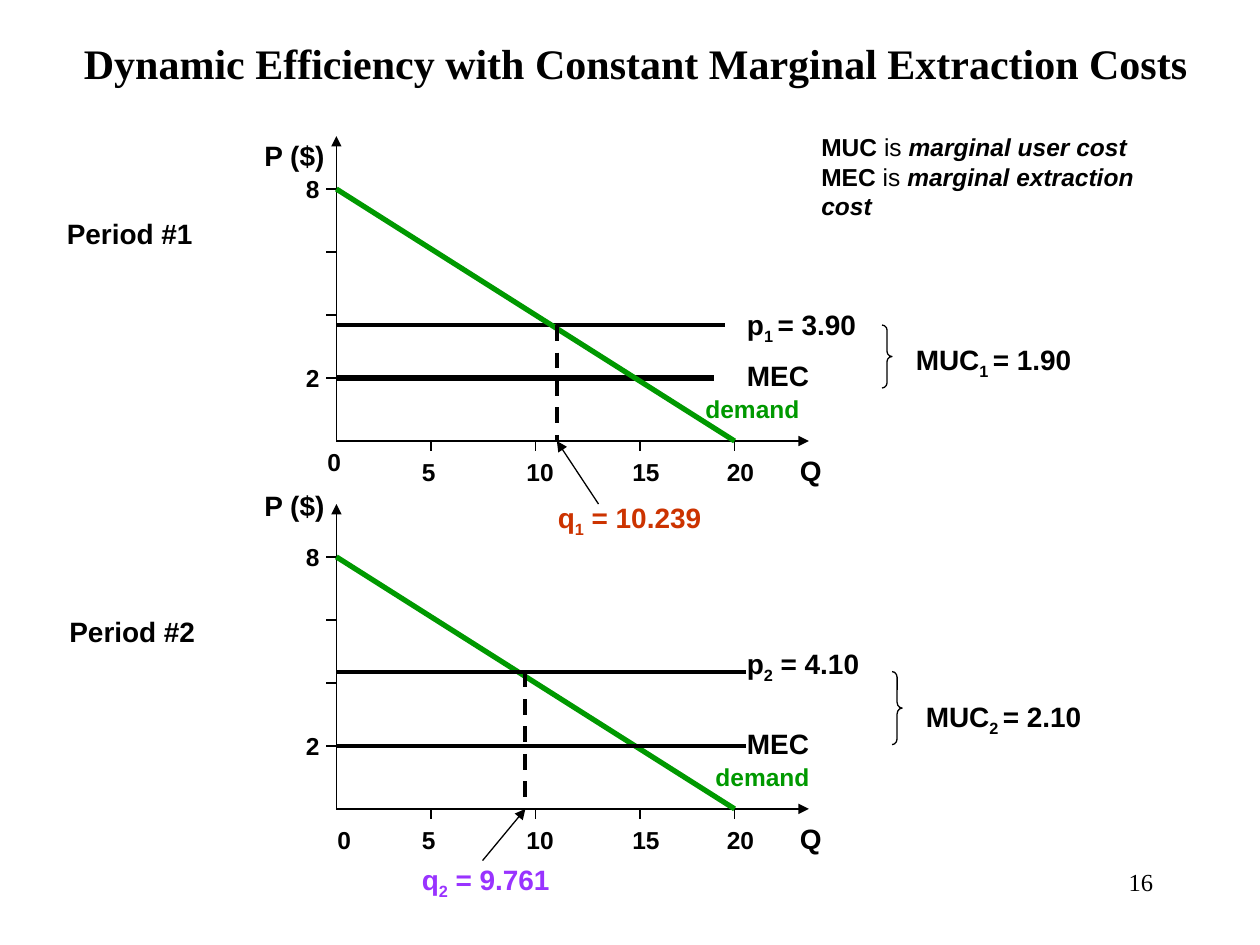
"""Build a slide of two demand diagrams showing dynamic efficiency."""
import pptx
import pptx.dml.color
import pptx.enum.dml
import pptx.enum.shapes
import pptx.enum.text
import pptx.oxml.ns
import pptx.util
from lxml import etree
from pptx.util import Inches

COLORS = {"black": "000000", "demand": "009900", "q1": "CC3300", "q2": "9933FF"}
ALIGN = pptx.enum.text.PP_ALIGN
AXIS_X, AXIS_END, AXIS_HEIGHT = 2.67, 6.42, 2.42
PRICE_STEP, TICK = 0.5, 0.08
QUANTITIES = [(5, 3.42, 3.25, 0.31), (10, 4.25, 4.08, 0.42),
              (15, 5.08, 4.92, 0.42), (20, 5.83, 5.67, 0.42)]

TITLE = "Dynamic Efficiency with Constant Marginal Extraction Costs"
NOTE = [[("MUC", "b"), (" is ", ""), ("marginal user cost", "bi")],
        [("MEC", "b"), (" is ", ""), ("marginal extraction cost", "bi")]]

PANELS = [
    {"base": 3.5, "period": ("Period #1", 0.25, 1.67, 1.56),
     "levels": [(3, 5.67, 3), (2.58, 5.75, 2.25)], "demand_on_top": True,
     "quantity": 4.42, "price": 2.58, "pointer": (4.75, 4),
     "brace": (7, 2.58, 0.5, 0.5), "zero": (2.5, 3.5),
     "price_axis": 1.05, "demand": (5.5, 3.08), "mec": 2.8,
     "labels": [("p", "1 ", "= 3.90", 5.83, 2.39, 1.09, "black"),
                ("MUC", "1 ", "= 1.90", 7.17, 2.67, 1.75, "black"),
                ("q", "1", " = 10.239", 4.33, 3.92, 1.36, "q1")]},
    {"base": 6.42, "period": ("Period #2", 0.45, 4.83, 1.2),
     "levels": [(5.92, 5.92, 2.25), (5.33, 5.92, 2.25)], "demand_on_top": False,
     "quantity": 4.17, "price": 5.33, "pointer": (3.83, 6.83),
     "brace": (7.08, 5.33, 0.58, 0.58), "zero": (2.58, 6.5),
     "price_axis": 3.83, "demand": (5.58, 6), "mec": 5.72,
     "labels": [("p", "2", " = 4.10", 5.83, 5.08, 1.17, "black"),
                ("MUC", "2 ", "= 2.10", 7.25, 5.5, 1.83, "black"),
                ("q", "2", " = 9.761", 3.25, 6.8, 1.23, "q2")]},
]


def rgb(name):
    return pptx.dml.color.RGBColor.from_string(COLORS[name])


def add_text(s, paragraphs, x, y, w, h=0.37, size=16, color="black",
             font="Arial", align=ALIGN.LEFT, wrap=False):
    """Add paragraphs of (text, style) runs: b bold, i italic, s subscript."""
    tf = s.shapes.add_textbox(Inches(x), Inches(y), Inches(w), Inches(h)).text_frame
    tf.word_wrap = wrap
    for i, runs in enumerate(paragraphs):
        p = tf.add_paragraph() if i else tf.paragraphs[0]
        p.alignment = align
        p.font.name, p.font.size = font, pptx.util.Pt(size)
        p.font.color.rgb = rgb(color)
        for text, style in runs:
            r = p.add_run()
            r.text = text
            r.font.name, r.font.size = font, pptx.util.Pt(size)
            r.font.color.rgb = rgb(color)
            r.font.bold, r.font.italic = "b" in style, "i" in style
            if "s" in style:
                r._r.get_or_add_rPr().set("baseline", "-25000")
    return tf


def add_label(s, text, x, y, w, h=0.37, **options):
    return add_text(s, [[(str(text), "b")]], x, y, w, h, **options)


def add_line(s, start, end, color="black", width=0.75, arrow=False, dash=False):
    line = s.shapes.add_connector(pptx.enum.shapes.MSO_CONNECTOR.STRAIGHT,
                                  *map(Inches, (*start, *end)))
    line.line.color.rgb = rgb(color)
    line.line.width = pptx.util.Pt(width)
    if dash:
        line.line.dash_style = pptx.enum.dml.MSO_LINE.DASH
    if arrow:
        ln = line.line._get_or_add_ln()
        etree.SubElement(ln, pptx.oxml.ns.qn("a:tailEnd"), type="triangle")
    etree.SubElement(line._element.spPr, pptx.oxml.ns.qn("a:effectLst"))


def add_axes(s, panel):
    base = panel["base"]
    origin = (AXIS_X, base)
    add_line(s, origin, (AXIS_X, base - AXIS_HEIGHT), arrow=True)
    add_line(s, origin, (AXIS_END, base), arrow=True)
    for price in (2, 4, 6, 8):
        y = base - price / 2 * PRICE_STEP
        add_line(s, (AXIS_X - TICK, y), (AXIS_X, y))
        if price in (2, 8):
            add_label(s, price, 2.33, y - 0.17, 0.31, 0.33, size=14)
    for quantity, x, left, width in QUANTITIES:
        add_line(s, (x, base), (x, base + TICK))
        add_label(s, quantity, left, base + TICK, width, 0.33, size=14)
    add_label(s, 0, *panel["zero"], 0.31, 0.33, size=14)
    add_label(s, "P ($)", 2, panel["price_axis"], 0.68)
    add_label(s, "Q", 6.25, base + 0.05, 0.38)


def add_curves(s, panel):
    base = panel["base"]
    levels = [((AXIS_X, y), (end, y), "black", width)
              for y, end, width in panel["levels"]]
    demand = [((AXIS_X, base - 4 * PRICE_STEP), (QUANTITIES[-1][1], base), "demand", 3)]
    for curve in levels + demand if panel["demand_on_top"] else demand + levels:
        add_line(s, *curve)
    foot = (panel["quantity"], base)
    add_line(s, (panel["quantity"], panel["price"]), foot, width=2.25, dash=True)
    add_line(s, panel["pointer"], foot, arrow=True)


def add_panel(s, panel):
    text, x, y, w = panel["period"]
    add_label(s, text, x, y, w, align=ALIGN.CENTER)
    add_axes(s, panel)
    add_curves(s, panel)
    x, y, h, curl = panel["brace"]
    sp = s.shapes.add_shape(pptx.enum.shapes.MSO_SHAPE.RIGHT_BRACE,
                            Inches(x), Inches(y), Inches(TICK), Inches(h))
    sp.shadow.inherit = False
    sp.fill.background()
    sp.line.color.rgb = rgb("black")
    sp.line.width = pptx.util.Pt(0.75)
    sp.adjustments[0], sp.adjustments[1] = curl, 0.5
    for symbol, index, value, x, y, w, color in panel["labels"]:
        runs = [(symbol, "b"), (index, "bs"), (value, "b")]
        add_text(s, [runs], x, y, w, color=color)
    add_label(s, "MEC", 5.83, panel["mec"], 0.69)
    add_label(s, "demand", *panel["demand"], 1, 0.33, size=14, color="demand")


def main():
    prs = pptx.Presentation()
    prs.slide_width, prs.slide_height = Inches(10), Inches(7.5)
    s = prs.slides.add_slide(prs.slide_layouts[6])
    tf = add_label(s, TITLE, 0.42, 0.25, 9.25, 0.5, size=24,
                   font="Times New Roman", align=ALIGN.CENTER, wrap=True)
    tf.vertical_anchor = pptx.enum.text.MSO_ANCHOR.MIDDLE
    for panel in PANELS:
        add_panel(s, panel)
    add_text(s, NOTE, 6.42, 1, 3, 0.57, size=14, wrap=True)
    add_text(s, [[("16", "")]], 7.17, 6.83, 2.08, 0.5, size=14,
             font="Times New Roman", align=ALIGN.RIGHT, wrap=True)
    prs.save("out.pptx")


if __name__ == "__main__":
    main()
